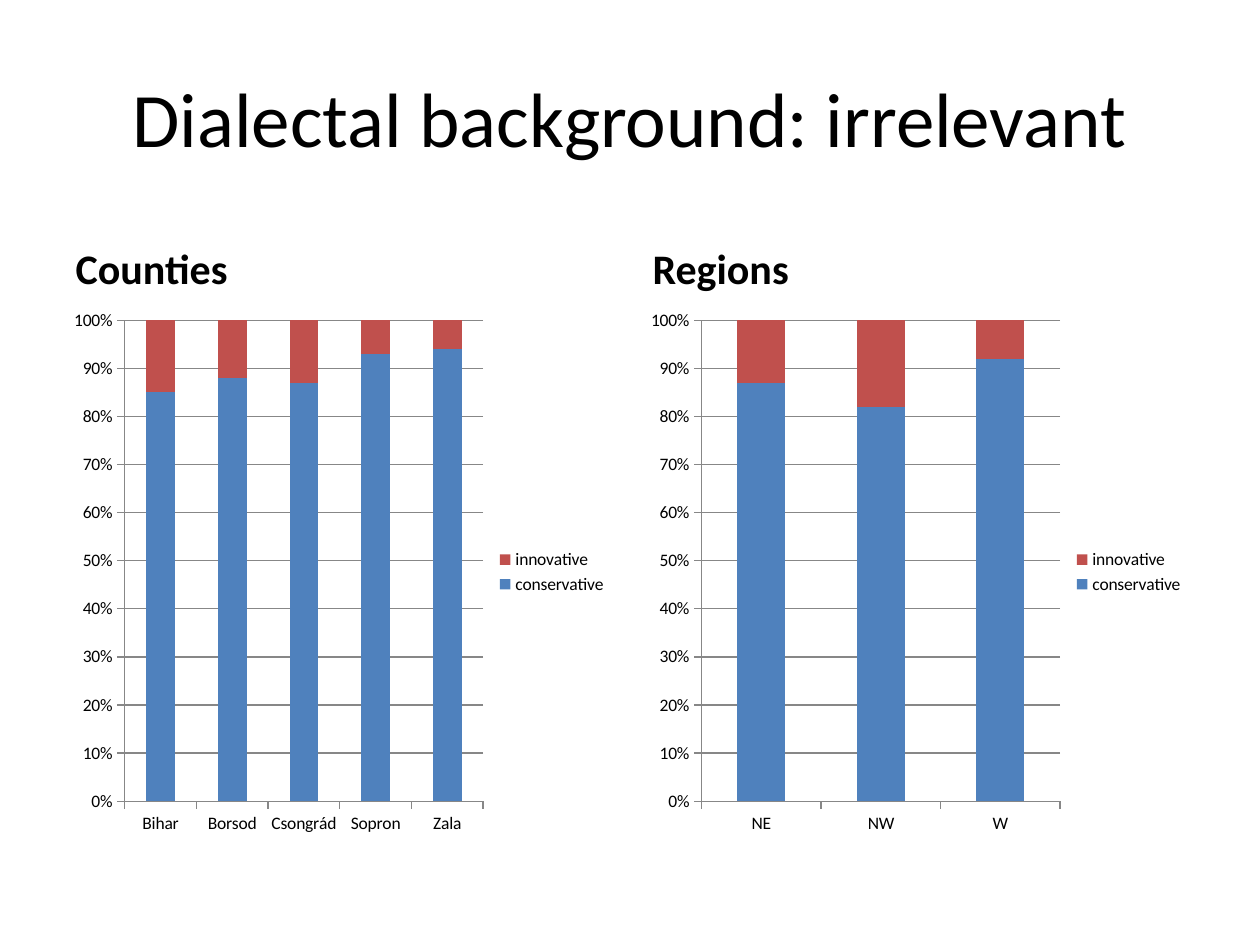
from pptx import Presentation
from pptx.chart.data import CategoryChartData
from pptx.dml.color import RGBColor
from pptx.enum.chart import XL_CHART_TYPE, XL_LEGEND_POSITION, XL_TICK_MARK
from pptx.enum.text import MSO_ANCHOR, PP_ALIGN
from pptx.util import Cm, Pt


def rgb(value):
    return RGBColor.from_string(value)


def set_text(sp, box, text, anchor, align, font):
    sp.left, sp.top, sp.width, sp.height = [Cm(v) for v in box]
    tf = sp.text_frame
    tf.word_wrap = True
    tf.vertical_anchor = anchor
    p = tf.paragraphs[0]
    p.alignment = align
    r = p.add_run()
    r.text = text
    for name, value in font.items():
        setattr(r.font, name, value)
    r.font.color.rgb = rgb("000000")


prs = Presentation()
prs.slide_width, prs.slide_height = Cm(25.4), Cm(19.05)
s = prs.slides.add_slide(prs.slide_layouts[4])
ph = {sp.placeholder_format.idx: sp for sp in s.placeholders}

title_font = {"name": "Calibri", "size": Pt(44), "bold": False}
heading_font = {"name": "Calibri", "size": Pt(24), "bold": True}
chart_font = {"name": "Calibri", "size": Pt(10), "bold": False}

set_text(ph[0], (1.27, 0.76, 22.86, 3.18), "Dialectal background: irrelevant",
         MSO_ANCHOR.MIDDLE, PP_ALIGN.CENTER, title_font)

width = 11.22
panels = [
    (1, 1.27, "Counties", ["Bihar", "Borsod", "Csongrád", "Sopron", "Zala"],
     [85, 88, 87, 93, 94]),
    (3, 12.9, "Regions", ["NE", "NW", "W"], [87, 82, 92]),
]

for idx, left, heading, cats, conservative in panels:
    set_text(ph[idx], (left, 4.26, width, 1.78), heading,
             MSO_ANCHOR.BOTTOM, PP_ALIGN.LEFT, heading_font)
    empty = ph[idx + 1].element
    empty.getparent().remove(empty)

    data = CategoryChartData()
    data.categories = cats
    data.add_series("conservative", conservative)
    data.add_series("innovative", [100 - v for v in conservative])
    chart = s.shapes.add_chart(XL_CHART_TYPE.COLUMN_STACKED_100, Cm(left), Cm(6.04),
                               Cm(width), Cm(10.98), data).chart
    for name, value in chart_font.items():
        setattr(chart.font, name, value)
    chart.font.color.rgb = rgb("000000")
    chart.has_title = False
    chart.has_legend = True
    chart.legend.position = XL_LEGEND_POSITION.RIGHT
    chart.legend.include_in_layout = False

    plot = chart.plots[0]
    for name, value in {"gap_width": 150, "overlap": 100, "vary_by_categories": False}.items():
        setattr(plot, name, value)
    for series, color in zip(plot.series, ("4F81BD", "C0504D")):
        series.format.fill.solid()
        series.format.fill.fore_color.rgb = rgb(color)

    val_axis = chart.value_axis
    for name, value in {"minimum_scale": 0, "maximum_scale": 1, "major_unit": 0.1,
                        "has_major_gridlines": True}.items():
        setattr(val_axis, name, value)
    val_axis.tick_labels.number_format = "0%"
    val_axis.tick_labels.number_format_is_linked = False
    for axis in (val_axis, chart.category_axis):
        axis.major_tick_mark = XL_TICK_MARK.OUTSIDE
        axis.minor_tick_mark = XL_TICK_MARK.NONE
    for part in (val_axis, chart.category_axis, val_axis.major_gridlines):
        part.format.line.color.rgb = rgb("878787")
        part.format.line.width = Pt(0.75)

prs.save("out.pptx")
